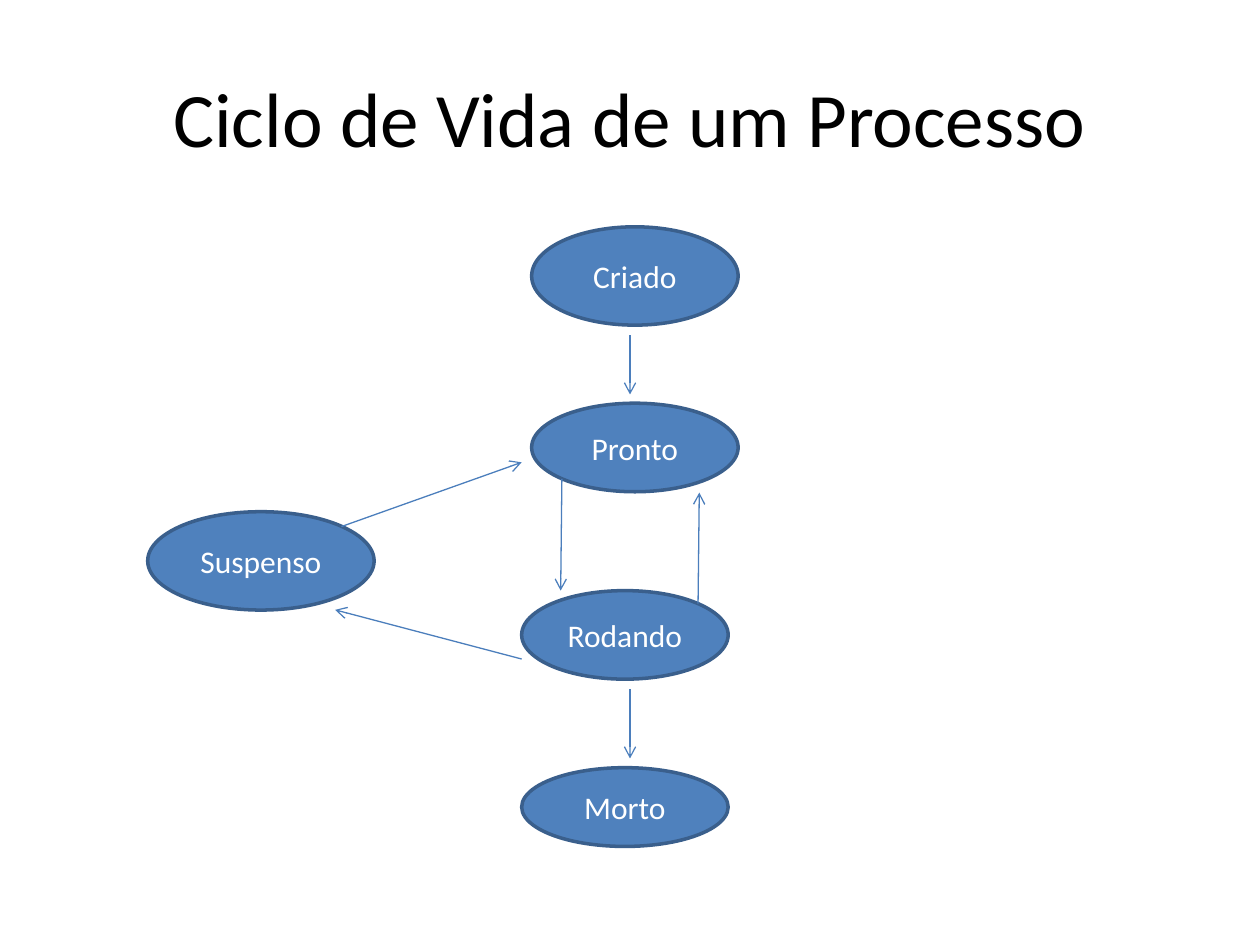
"""Build the process life cycle slide: five states joined by arrows."""
from lxml import etree
from pptx import Presentation
from pptx.dml.color import RGBColor
from pptx.enum import shapes, text
from pptx.oxml.ns import qn
from pptx.util import Pt

BLACK = RGBColor(0x00, 0x00, 0x00)
WHITE = RGBColor(0xFF, 0xFF, 0xFF)
STATE_BLUE = RGBColor(0x4F, 0x81, 0xBD)
OUTLINE_BLUE = RGBColor(0x3A, 0x5F, 0x8C)
ARROW_BLUE = RGBColor(0x4B, 0x7E, 0xBC)


def write(holder, words, size=18, color=WHITE, font="Calibri"):
    frame = holder.text_frame
    frame.word_wrap = True
    frame.vertical_anchor = text.MSO_ANCHOR.MIDDLE
    paragraph = frame.paragraphs[0]
    paragraph.alignment = text.PP_ALIGN.CENTER
    run = paragraph.add_run()
    run.text = words
    run.font.size = Pt(size)
    run.font.name = font
    run.font.color.rgb = color


deck = Presentation()
deck.slide_width, deck.slide_height = Pt(720), Pt(540)
slide = deck.slides.add_slide(deck.slide_layouts[5])

heading = slide.shapes.title
heading.left, heading.top, heading.width, heading.height = Pt(36), Pt(21.6), Pt(648), Pt(90)
write(heading, "Ciclo de Vida de um Processo", size=44, color=BLACK)

states = [
    ("Criado", 303.8, 129.6, 118, 56.2),
    ("Pronto", 303.8, 230.4, 118, 50.6),
    ("Rodando", 298.1, 337.5, 118, 50.6),
    ("Morto", 298.1, 438.7, 118, 45),
    ("Suspenso", 84.4, 292.4, 129.4, 56.2),
]
for label, *box in states:
    state = slide.shapes.add_shape(shapes.MSO_SHAPE.OVAL, *map(Pt, box))
    state.shadow.inherit = False
    state.fill.solid()
    state.fill.fore_color.rgb = STATE_BLUE
    state.line.color.rgb = OUTLINE_BLUE
    state.line.width = Pt(2)
    write(state, label)

transitions = [
    (321.1, 273.6, 320.4, 337.5),
    (398.9, 344.9, 399.6, 281.5),
    (360, 191.5, 360, 225.4),
    (360, 393.8, 360, 433.4),
    (195.1, 300.9, 298.1, 264.2),
    (298.1, 376.6, 191.5, 348.5),
]
for ends in transitions:
    transition = slide.shapes.add_connector(shapes.MSO_CONNECTOR.STRAIGHT, *map(Pt, ends))
    transition.line.color.rgb = ARROW_BLUE
    transition.line.width = Pt(0.75)
    outline = transition.line._get_or_add_ln()
    etree.SubElement(outline, qn("a:tailEnd"), type="arrow")
    etree.SubElement(outline.getparent(), qn("a:effectLst"))

deck.save("out.pptx")
